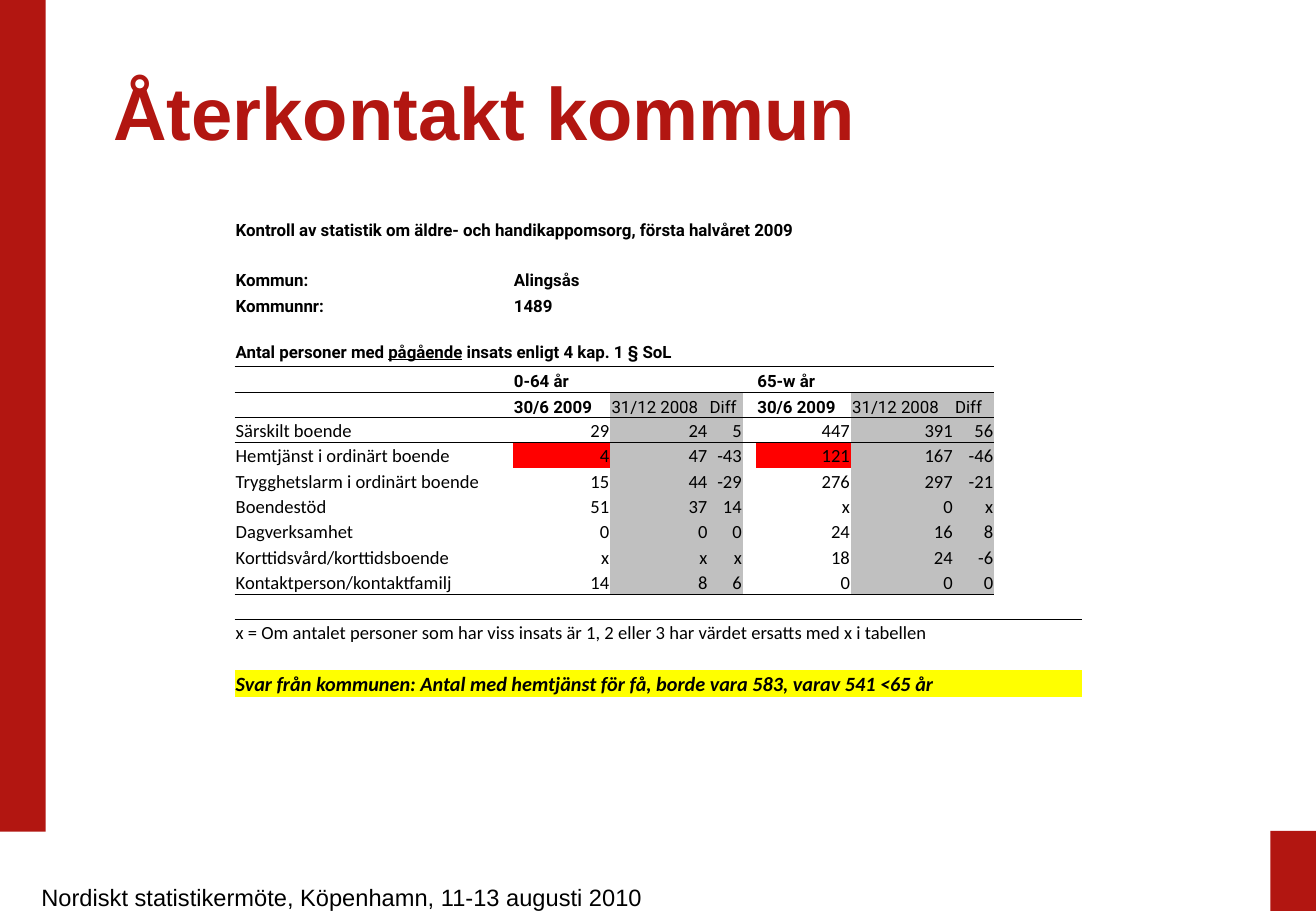
import pptx
import pptx.util
import pptx.dml.color
import pptx.enum.shapes
import pptx.enum.text
import pptx.oxml.ns
import lxml.etree

Pt = pptx.util.Pt
RGB = pptx.dml.color.RGBColor
ALIGN = pptx.enum.text.PP_ALIGN
ANCHOR = pptx.enum.text.MSO_ANCHOR
qn = pptx.oxml.ns.qn

# Content
TITLE = "Återkontakt kommun"
FOOTER = "Nordiskt statistikermöte, Köpenhamn, 11-13 augusti 2010"
DATES = ["30/6 2009", "31/12 2008", "Diff"]
HEADS = {  # (row, column): text; every second part of a tuple is underlined
    (0, 0): "Kontroll av statistik om äldre- och handikappomsorg, första halvåret 2009",
    (2, 0): "Kommun:",
    (2, 1): "Alingsås",
    (3, 0): "Kommunnr:",
    (3, 1): "1489",
    (5, 0): ("Antal personer med ", "pågående", " insats enligt 4 kap. 1 § SoL"),
    (6, 1): "0-64 år",
    (6, 5): "65-w år",
}
CARE = [  # service, ages 0-64, ages 65 and up
    ("Särskilt boende", ["29", "24", "5"], ["447", "391", "56"]),
    ("Hemtjänst i ordinärt boende", ["4", "47", "-43"], ["121", "167", "-46"]),
    ("Trygghetslarm i ordinärt boende", ["15", "44", "-29"], ["276", "297", "-21"]),
    ("Boendestöd", ["51", "37", "14"], ["x", "0", "x"]),
    ("Dagverksamhet", ["0", "0", "0"], ["24", "16", "8"]),
    ("Korttidsvård/korttidsboende", ["x", "x", "x"], ["18", "24", "-6"]),
    ("Kontaktperson/kontaktfamilj", ["14", "8", "6"], ["0", "0", "0"]),
]
NOTE = "x = Om antalet personer som har viss insats är 1, 2 eller 3 har värdet ersatts med x i tabellen"
REPLY = "Svar från kommunen: Antal med hemtjänst för få, borde vara 583, varav 541 <65 år"

# Look
BRAND = RGB(0xB2, 0x16, 0x11)
BLACK = RGB(0, 0, 0)
GREY = RGB(0xC0, 0xC0, 0xC0)
RED = RGB(0xFF, 0, 0)
YELLOW = RGB(0xFF, 0xFF, 0)
PLAIN = "{2D5ABB26-0587-4C30-8999-92F81FD0307C}"

# Grid
WIDTHS = [164.9, 57.9, 58.2, 20.4, 7.9, 56.2, 61, 24, 51.8]
ROWS, STEP = 19, 15
DAY, FIRST, NOTED, ANSWER = 7, 8, 16, 18
FLAG = FIRST + 1
LAST = FIRST + len(CARE) - 1
GROUPS = (1, 5)
SHADED = (2, 3, 6, 7)
SPANS = {(0, 0): 7, (5, 0): 6, (6, 1): 3, (6, 5): 3, (NOTED, 0): 9, (ANSWER, 0): 9}
RULES = {5: range(8), 6: range(1, 8), DAY: range(8), LAST: range(8)}


def put(frame, text, font="Roboto", size=10, color=BLACK, bold=False,
        italic=False, align=ALIGN.LEFT, space=None):
    line = frame.paragraphs[0]
    line.alignment = align
    if space:
        line.line_spacing = space
    parts = (text,) if isinstance(text, str) else text
    for i, part in enumerate(parts):
        run = line.add_run()
        run.text = part
        run.font.name = font
        run.font.size = Pt(size)
        run.font.bold = bold
        run.font.italic = italic
        run.font.underline = i % 2 == 1
        run.font.color.rgb = color


def block(slide, x, y, w, h):
    shape = slide.shapes.add_shape(pptx.enum.shapes.MSO_SHAPE.RECTANGLE,
                                   Pt(x), Pt(y), Pt(w), Pt(h))
    shape.shadow.inherit = False
    shape.fill.solid()
    shape.fill.fore_color.rgb = BRAND
    shape.line.fill.background()


def label(slide, x, y, w, h, text, anchor=ANCHOR.TOP, **look):
    frame = slide.shapes.add_textbox(Pt(x), Pt(y), Pt(w), Pt(h)).text_frame
    frame.word_wrap = True
    frame.vertical_anchor = anchor
    put(frame, text, font="Arial", **look)


def edge(cell, side):
    props = cell._tc.get_or_add_tcPr()
    line = lxml.etree.SubElement(props, qn("a:ln" + side), w=str(Pt(0.5)))
    fill = lxml.etree.SubElement(line, qn("a:solidFill"))
    lxml.etree.SubElement(fill, qn("a:srgbClr"), val=str(BLACK))


def entries():
    """Map each filled cell to its text and format."""
    cells = {spot: (text, {"bold": True}) for spot, text in HEADS.items()}
    for start in GROUPS:
        for i, text in enumerate(DATES):
            cells[DAY, start + i] = (text, {"bold": i == 0})
    body = {"font": "Calibri", "size": 11}
    for r, (name, *ages) in enumerate(CARE, FIRST):
        cells[r, 0] = (name, body)
        for start, nums in zip(GROUPS, ages):
            for c, num in enumerate(nums, start):
                cells[r, c] = (num, {**body, "align": ALIGN.RIGHT})
    cells[NOTED, 0] = (NOTE, body)
    cells[ANSWER, 0] = (REPLY, {"font": "Calibri", "size": 12,
                                "bold": True, "italic": True})
    return cells


def tint(r, c):
    if r == ANSWER:
        return YELLOW
    if r == FLAG and c in GROUPS:
        return RED
    if DAY <= r <= LAST and c in SHADED:
        return GREY
    return None


def grid(slide):
    frame = slide.shapes.add_table(ROWS, len(WIDTHS), Pt(139), Pt(127.4),
                                   Pt(sum(WIDTHS)), Pt(ROWS * STEP + 1))
    table = frame.table
    table.first_row = table.horz_banding = False
    next(frame.element.iter(qn("a:tableStyleId"))).text = PLAIN
    for col, width in zip(table.columns, WIDTHS):
        col.width = Pt(width)
    for r, row in enumerate(table.rows):
        row.height = Pt(STEP + (r == ANSWER))
    for (r, c), span in SPANS.items():
        table.cell(r, c).merge(table.cell(r, c + span - 1))

    cells = entries()
    for r in range(ROWS):
        for c in range(len(WIDTHS)):
            cell = table.cell(r, c)
            cell.margin_left = cell.margin_right = cell.margin_top = Pt(0.7)
            cell.margin_bottom = Pt(0)
            cell.vertical_anchor = ANCHOR.TOP if r == 5 else ANCHOR.BOTTOM
            if c in RULES.get(r - 1, ()):
                edge(cell, "T")
            if c in RULES.get(r, ()):
                edge(cell, "B")
            color = tint(r, c)
            if color is None:
                cell.fill.background()
            else:
                cell.fill.solid()
                cell.fill.fore_color.rgb = color
            if (r, c) in cells:
                text, look = cells[r, c]
                put(cell.text_frame, text, **look)
            else:
                # Keep empty cells from stretching the row
                line = cell.text_frame.paragraphs[0]._p
                lxml.etree.SubElement(line, qn("a:endParaRPr"), sz="1000")


def main():
    deck = pptx.Presentation()
    deck.slide_width, deck.slide_height = Pt(780), Pt(540)
    slide = deck.slides.add_slide(deck.slide_layouts[6])
    # Frame of the page
    block(slide, 0, 0, 27, 493)
    block(slide, 753, 492.5, 27, 47.5)
    label(slide, 0, 520, 388, 20, FOOTER, size=14, align=ALIGN.RIGHT)
    # Main part
    grid(slide)
    label(slide, 60, 24, 663, 90, TITLE, anchor=ANCHOR.MIDDLE,
          size=44, color=BRAND, bold=True, space=0.9)
    deck.save("out.pptx")


if __name__ == "__main__":
    main()
